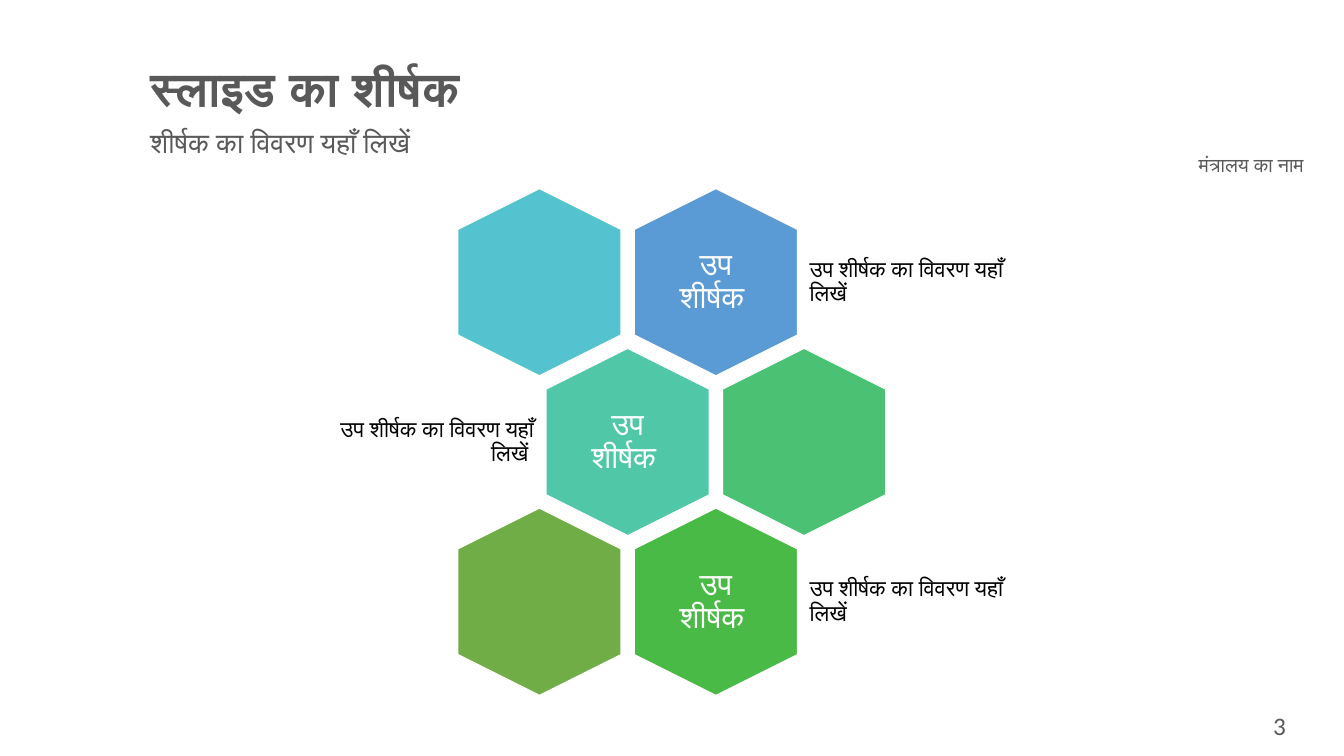
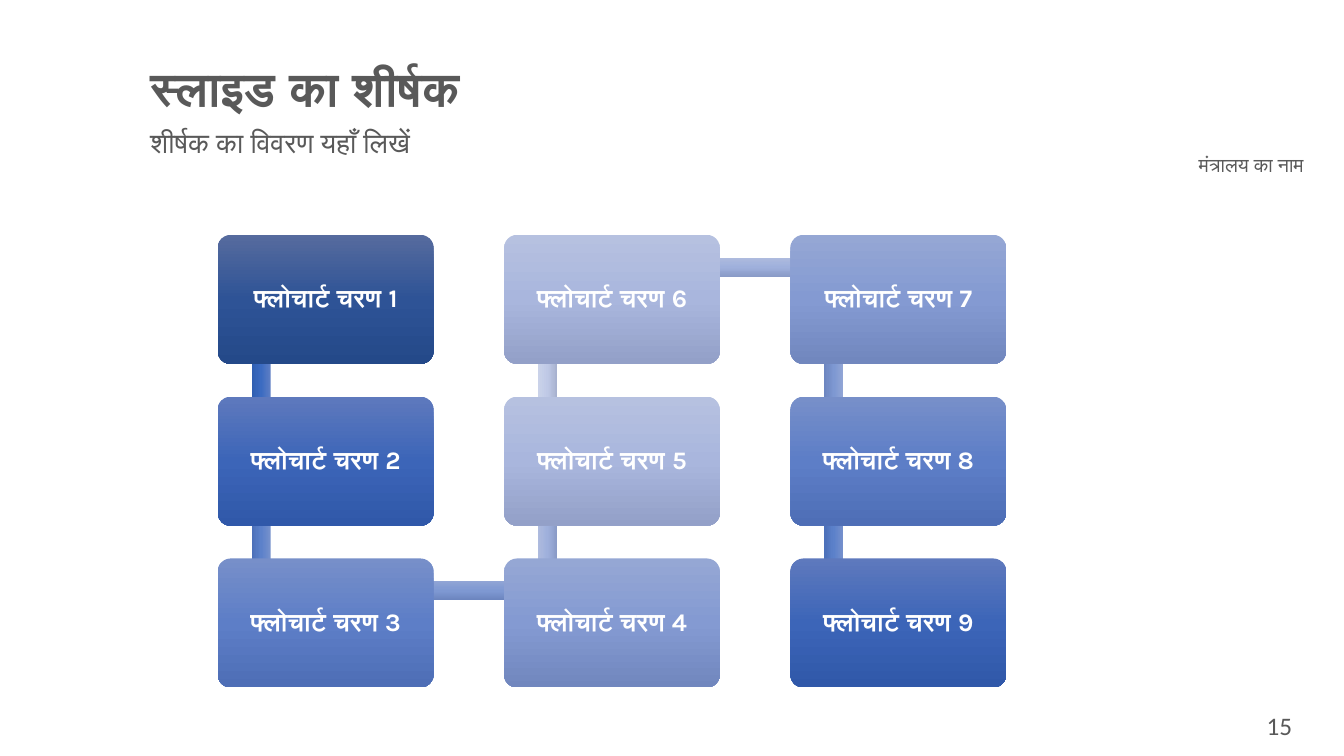
from copy import deepcopy

from pptx import Presentation
from pptx.dml.color import RGBColor
from pptx.enum.shapes import MSO_SHAPE
from pptx.enum.text import MSO_ANCHOR, MSO_AUTO_SIZE, PP_ALIGN
from pptx.oxml.ns import qn
from pptx.util import Inches, Pt

HEXAGON = MSO_SHAPE.HEXAGON
RECTANGLE = MSO_SHAPE.RECTANGLE
ROUNDED = MSO_SHAPE.ROUNDED_RECTANGLE
LEFT, CENTER, RIGHT = PP_ALIGN.LEFT, PP_ALIGN.CENTER, PP_ALIGN.RIGHT
TOP, MIDDLE = MSO_ANCHOR.TOP, MSO_ANCHOR.MIDDLE
NO_AUTOFIT = MSO_AUTO_SIZE.NONE

GRAY = RGBColor(0x59, 0x59, 0x59)
WHITE = RGBColor(0xFF, 0xFF, 0xFF)
BLACK = RGBColor(0x00, 0x00, 0x00)
CYAN = RGBColor(0x55, 0xC3, 0xCF)
BLUE = RGBColor(0x5B, 0x9B, 0xD5)
TEAL = RGBColor(0x50, 0xC8, 0xA7)
MINT = RGBColor(0x4B, 0xC1, 0x74)
OLIVE = RGBColor(0x70, 0xAD, 0x47)
GREEN = RGBColor(0x4A, 0xBA, 0x46)


def gradient(*codes):
    """Return the colours of a gradient from their hex codes."""
    return [RGBColor.from_string(code) for code in codes]


BOX_NAVY = gradient("566B9E", "2E5396", "244989")
BOX_BLUE = gradient("5E79BD", "3C65B8", "3058A9")
BOX_MID = gradient("778FC9", "5D7EC7", "4E6EB6")
BOX_LIGHT = gradient("95A7D4", "849AD2", "7187BE")
BOX_PALE = gradient("B6C1E0", "A9B6DD", "93A0C8")
BAR_BLUE = gradient("5E7EC4", "3B6BC1", "2F5EB1")
BAR_MID = gradient("7691CC", "5C81CA", "4C70B9")
BAR_LIGHT = gradient("91A5D5", "7E98D2", "6C85BF")
BAR_PALE = gradient("AEBBDE", "9FB0DC", "8A9BC7")
BAR_FAINT = gradient("CAD2E9", "BFC9E6", "A7B1CF")

TITLE = "स्लाइड का शीर्षक"
SUBTITLE = "शीर्षक का विवरण यहाँ लिखें"
MINISTRY = "मंत्रालय का नाम"
HEX_LABEL = "उप शीर्षक "
DESCRIPTION = "उप शीर्षक का विवरण यहाँ लिखें"

HEX_LONG, HEX_SHORT = 1.86, 1.62
HEX_ORIGIN, HEX_PITCH = (5.35, 2.8), (1.75, 1.585)
LABEL_SIZE, DESCRIPTION_SIZE = (1.12, 1.28), (2.08, 1.12)
DESCRIPTION_GAP = 0.86

HEXAGONS = [
    (0, 1, BLUE, RIGHT),
    (0, 0, CYAN, None),
    (1, 0, TEAL, LEFT),
    (1, 1, MINT, None),
    (2, 1, GREEN, RIGHT),
    (2, 0, OLIVE, None),
]

STEP_ROWS = 3
STEP_ORIGIN, STEP_PITCH = (2.16, 2.33), (2.84, 1.605)
STEP_SIZE = (2.14, 1.28)
BAR_ANCHOR, BAR_THICKNESS = (0.43, 0.32), 0.19
STEP_BOXES = [BOX_NAVY, BOX_BLUE, BOX_MID, BOX_LIGHT, BOX_PALE,
              BOX_PALE, BOX_LIGHT, BOX_MID, BOX_BLUE]
STEP_BARS = [BAR_BLUE, BAR_MID, BAR_LIGHT, BAR_PALE, BAR_FAINT,
             BAR_PALE, BAR_LIGHT, BAR_MID]


def inches(*lengths):
    """Convert several lengths in inches."""
    return [Inches(length) for length in lengths]


def centered(x, y, width, height):
    """Return the frame of a box from its centre and size."""
    return x - width / 2, y - height / 2, width, height


def write(shape, text, size, color, align=LEFT, anchor=TOP, font="Calibri",
          bold=False, spacing=0.9, inset=None):
    """Set and format the only paragraph of a shape."""
    frame = shape.text_frame
    frame.text = text
    frame.word_wrap = True
    frame.auto_size = NO_AUTOFIT
    frame.vertical_anchor = anchor
    if inset is not None:
        frame.margin_left = frame.margin_right = Inches(inset)
        frame.margin_top = frame.margin_bottom = Inches(inset)
    paragraph = frame.paragraphs[0]
    paragraph.alignment = align
    paragraph.line_spacing = spacing
    paragraph.space_before = Pt(0)
    paragraph.font.name = font
    paragraph.font.size = Pt(size)
    paragraph.font.bold = bold
    paragraph.font.color.rgb = color


def add_text(slide, frame, text, size, color, **style):
    """Add a formatted text box."""
    write(slide.shapes.add_textbox(*inches(*frame)), text, size, color, **style)


def add_preset(slide, kind, frame, rotation=0):
    """Add a preset shape without shadow or outline."""
    shape = slide.shapes.add_shape(kind, *inches(*frame))
    shape.rotation = rotation
    shape.shadow.inherit = False
    shape.line.fill.background()
    return shape


def fill_gradient(shape, colors):
    """Fill a shape from top to bottom with evenly spaced colours."""
    shape.fill.gradient()
    shape.fill.gradient_angle = 270
    stops = shape.element.spPr.find(".//" + qn("a:gsLst"))
    while len(stops) < len(colors):
        stops.append(deepcopy(stops[-1]))
    for index, stop in enumerate(shape.fill.gradient_stops):
        stop.position = index / (len(colors) - 1)
        stop.color.rgb = colors[index]


def add_slide(presentation, number):
    """Add a slide with its headings, ministry name and number."""
    slide = presentation.slides.add_slide(presentation.slide_layouts[0])
    add_text(slide, (11.79, 1.47, 1.57, 0.34), MINISTRY, 14, GRAY,
             font="Arial", spacing=1)
    headings = [(TITLE, 0.6, 0.55, 34, True), (SUBTITLE, 1.23, 0.63, 20, False)]
    for shape, heading in zip(slide.placeholders, headings):
        text, top, height, size, bold = heading
        shape.left, shape.top, shape.width, shape.height = inches(
            1.39, top, 9.61, height)
        write(shape, text, size, GRAY, bold=bold)
    add_text(slide, (12.1, 7, 1.18, 0.45), str(number), 18, GRAY,
             align=CENTER, spacing=1)
    return slide


def add_hexagon(slide, row, column, color, side):
    """Add a honeycomb cell, labelled and described when it has a side."""
    x = HEX_ORIGIN[0] + (column + row % 2 / 2) * HEX_PITCH[0]
    y = HEX_ORIGIN[1] + row * HEX_PITCH[1]
    shape = add_preset(slide, HEXAGON, centered(x, y, HEX_LONG, HEX_SHORT), 90)
    shape.fill.solid()
    shape.fill.fore_color.rgb = color
    shape.line.color.rgb = WHITE
    shape.line.width = Pt(1)
    if side is None:
        return
    add_text(slide, centered(x, y, *LABEL_SIZE), HEX_LABEL, 22, WHITE,
             align=CENTER, anchor=MIDDLE, inset=0.09)
    width, height = DESCRIPTION_SIZE
    left = x + DESCRIPTION_GAP
    text, align = DESCRIPTION, LEFT
    if side == LEFT:
        left = x - DESCRIPTION_GAP - width
        text, align = DESCRIPTION + " ", RIGHT
    add_text(slide, (left, y - height / 2, width, height), text, 16, BLACK,
             align=align, anchor=MIDDLE, inset=0.07)


def step_position(index):
    """Return the left and top of a step, columns running down then up."""
    column, row = divmod(index, STEP_ROWS)
    if column % 2:
        row = STEP_ROWS - 1 - row
    return (STEP_ORIGIN[0] + column * STEP_PITCH[0],
            STEP_ORIGIN[1] + row * STEP_PITCH[1])


def add_bar(slide, index, colors):
    """Join a step to the next one with a bar."""
    (left, top), (next_left, next_top) = map(step_position, (index, index + 1))
    x = (left + next_left) / 2 + BAR_ANCHOR[0]
    y = (top + next_top) / 2 + BAR_ANCHOR[1]
    length = abs(next_left - left) + abs(next_top - top)
    rotation = 0
    if next_left == left:
        rotation = 90 if next_top > top else 270
    bar = add_preset(slide, RECTANGLE, centered(x, y, length, BAR_THICKNESS),
                     rotation)
    fill_gradient(bar, colors)


def add_step(slide, index, colors):
    """Add a numbered step of the flowchart."""
    box = add_preset(slide, ROUNDED, (*step_position(index), *STEP_SIZE))
    box.adjustments[0] = 0.1
    fill_gradient(box, colors)
    write(box, f"फ्लोचार्ट चरण {index + 1}", 18, WHITE, align=CENTER,
          anchor=MIDDLE, font="Karla", bold=True, inset=0.07)


def main():
    """Build and save the presentation."""
    presentation = Presentation()
    presentation.slide_width, presentation.slide_height = inches(13.33, 7.5)

    honeycomb = add_slide(presentation, 3)
    for row, column, color, side in HEXAGONS:
        add_hexagon(honeycomb, row, column, color, side)

    flowchart = add_slide(presentation, 15)
    for index, colors in enumerate(STEP_BOXES):
        if index < len(STEP_BARS):
            add_bar(flowchart, index, STEP_BARS[index])
        add_step(flowchart, index, colors)

    presentation.save("out.pptx")


if __name__ == "__main__":
    main()
